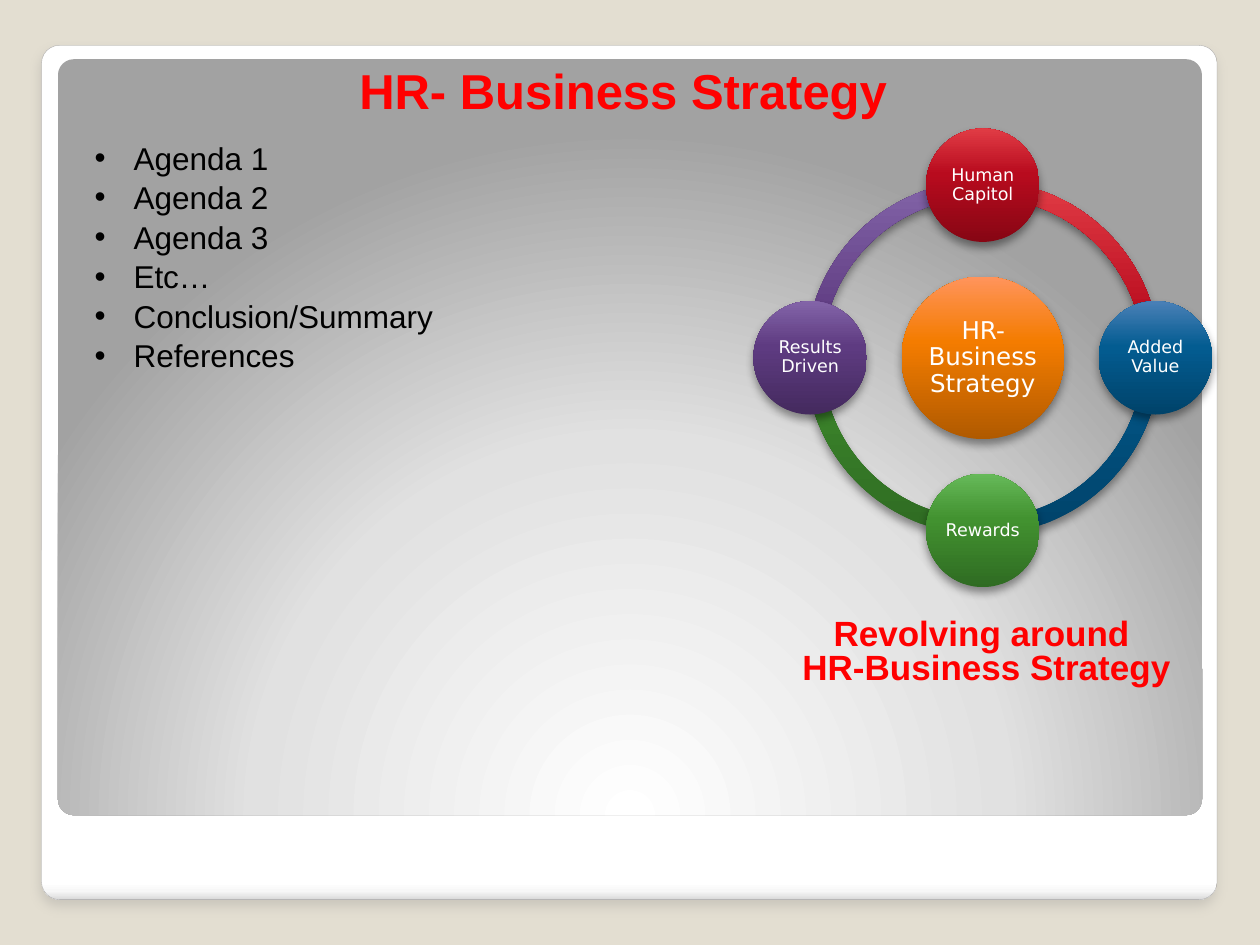
from math import cos, sin, radians
from lxml import etree
from pptx import Presentation
from pptx.dml.color import RGBColor
from pptx.enum.shapes import MSO_SHAPE
from pptx.enum.text import MSO_ANCHOR, MSO_AUTO_SIZE, PP_ALIGN
from pptx.oxml import parse_xml
from pptx.oxml.ns import nsdecls, qn
from pptx.util import Inches, Pt

ROUND, OVAL, ARC = MSO_SHAPE.ROUNDED_RECTANGLE, MSO_SHAPE.OVAL, MSO_SHAPE.BLOCK_ARC
CENTER, MIDDLE, BOTTOM = PP_ALIGN.CENTER, MSO_ANCHOR.MIDDLE, MSO_ANCHOR.BOTTOM
RISING = '<a:lin ang="16200000" scaled="0"/>'
FALLING = '<a:lin ang="5400000" scaled="0"/>'
RADIAL = ('<a:path path="circle"><a:fillToRect l="50000" t="175000" '
          'r="50000" b="-75000"/></a:path>')


def add_shaded(kind, box, stops, course, shadow=None):
    """Add a shape with a gradient; shadow is colour, opacity, blur, distance."""
    shape = slide.shapes.add_shape(kind, *map(Inches, box))
    shape.line.fill.background()
    shape.shadow.inherit = False
    marks = "".join(f'<a:gs pos="{pos * 1000}"><a:srgbClr val="{tint}"/></a:gs>'
                    for pos, tint in stops)
    props = shape._element.spPr
    props.find(qn("a:prstGeom")).addnext(parse_xml(
        f'<a:gradFill {nsdecls("a")} rotWithShape="1"><a:gsLst>{marks}</a:gsLst>'
        f'{course}</a:gradFill>'))
    if shadow:
        tint, alpha, blur, dist = shadow
        cast = etree.SubElement(props.find(qn("a:effectLst")), qn("a:outerShdw"),
                                blurRad=str(Pt(blur)), dist=str(Pt(dist)),
                                dir="5400000", rotWithShape="0")
        hue = etree.SubElement(cast, qn("a:srgbClr"), val=tint)
        etree.SubElement(hue, qn("a:alpha"), val=str(alpha * 1000))
    return shape


def style(frame, size, font, tint, bold=False, align=None, gap=None):
    for para in frame.paragraphs:
        para.alignment = align
        para.line_spacing = gap
        for run in para.runs:
            run.font.size, run.font.name, run.font.bold = Pt(size), font, bold
            run.font.color.rgb = RGBColor.from_string(tint)


deck = Presentation()
deck.slide_width, deck.slide_height = Inches(10), Inches(7.5)
slide = deck.slides.add_slide(deck.slide_layouts[1])
slide.background.fill.solid()
slide.background.fill.fore_color.rgb = RGBColor.from_string("E3DED1")

# Framed backdrop, placed behind the placeholders
frame = add_shaded(ROUND, (0.33, 0.36, 9.33, 6.78),
                   [(0, "FFFFFF"), (98, "FFFFFF"), (99, "F7F7F7"), (100, "DADADA")],
                   FALLING, ("808080", 25, 6, 4))
frame.line.color.rgb = RGBColor.from_string("A4A3A3")
frame.line.width = Pt(0.16)
panel = add_shaded(ROUND, (0.46, 0.47, 9.08, 6),
                   [(0, "FFFFFF"), (55, "E1E1E1"), (100, "A2A2A2")], RADIAL)
for spot, back in enumerate((frame, panel), 2):
    back.adjustments[0] = 0.021
    slide.shapes._spTree.insert(spot, back._element)

# Title and agenda
title, body = slide.placeholders
title.left, title.top, title.width, title.height = map(Inches, (0.47, 0.43, 8.95, 0.57))
title.text_frame.text = "HR- Business Strategy"
title.text_frame.vertical_anchor = BOTTOM
title.text_frame.auto_size = MSO_AUTO_SIZE.NONE
style(title.text_frame, 28, "Arial", "FF0000", True, CENTER)

body.left, body.top, body.width, body.height = map(Inches, (0.55, 1, 6.7, 5.84))
agenda = body.text_frame
agenda.text = "\n".join(["Agenda 1", "Agenda 2", "Agenda 3", "Etc…",
                         "Conclusion/Summary", "References"])
agenda.auto_size = MSO_AUTO_SIZE.NONE
agenda.margin_left, agenda.margin_top = Inches(0.2), Inches(0.1)
style(agenda, 18, "Arial", "000000")
for para in agenda.paragraphs:
    para.space_before = Pt(1)
    props = para._p.get_or_add_pPr()
    props.set("marL", str(Inches(0.31)))
    props.set("indent", str(-Inches(0.31)))
    etree.SubElement(props, qn("a:buChar"), char="•")

# Caption under the wheel
caption = slide.shapes.add_textbox(*map(Inches, (5.83, 4.83, 4, 0.67))).text_frame
caption.word_wrap = True
caption.vertical_anchor = BOTTOM
caption.text = "Revolving around \nHR-Business Strategy"
style(caption, 20, "Arial", "FF0000", True, CENTER, 0.8)

# Wheel: nodes run clockwise from the top, each followed by its arc
MID_X, MID_Y, ORBIT, RING = 7.8, 2.84, 1.37, 2.81
SHADE = ("000000", 40, 5.2, 3)
nodes = [
    ("Human Capitol", ("870614", "B80B1E", "E13C45")),
    ("Added Value", ("00436A", "035C91", "4A80B7")),
    ("Rewards", ("2F6B22", "429230", "66B959")),
    ("Results Driven", ("442A5E", "5E3B81", "8364A8")),
]
QUARTER = 54  # 90 degrees in the units of the arc's adjustments
for i, (label, tints) in reversed(list(enumerate(nodes))):
    arc = add_shaded(ARC, (MID_X - RING / 2, MID_Y - RING / 2, RING, RING),
                     zip((0, 60, 100), tints), RISING, SHADE)
    arc.adjustments[0] = (i + 3) % 4 * QUARTER
    arc.adjustments[1] = i * QUARTER
    arc.adjustments[2] = 0.046

discs = [("HR-Business Strategy", ("B05A00", "F47C00", "FF945C"),
          MID_X, MID_Y, 1.29, 14, 0.02)]
for i, (label, tints) in enumerate(nodes):
    turn = radians(90 * i - 90)
    discs.append((label, tints, MID_X + ORBIT * cos(turn),
                  MID_Y + ORBIT * sin(turn), 0.9, 10, 0.01))
for label, tints, x, y, size, points, inset in discs:
    disc = add_shaded(OVAL, (x - size / 2, y - size / 2, size, size),
                      zip((0, 60, 100), tints), RISING, SHADE)
    text = disc.text_frame
    text.margin_left = text.margin_right = Inches(inset)
    text.margin_top = text.margin_bottom = Inches(inset)
    text.word_wrap = True
    text.vertical_anchor = MIDDLE
    text.text = label
    style(text, points, "DejaVu Sans", "FFFFFF", False, CENTER, 0.9)

deck.save("out.pptx")
